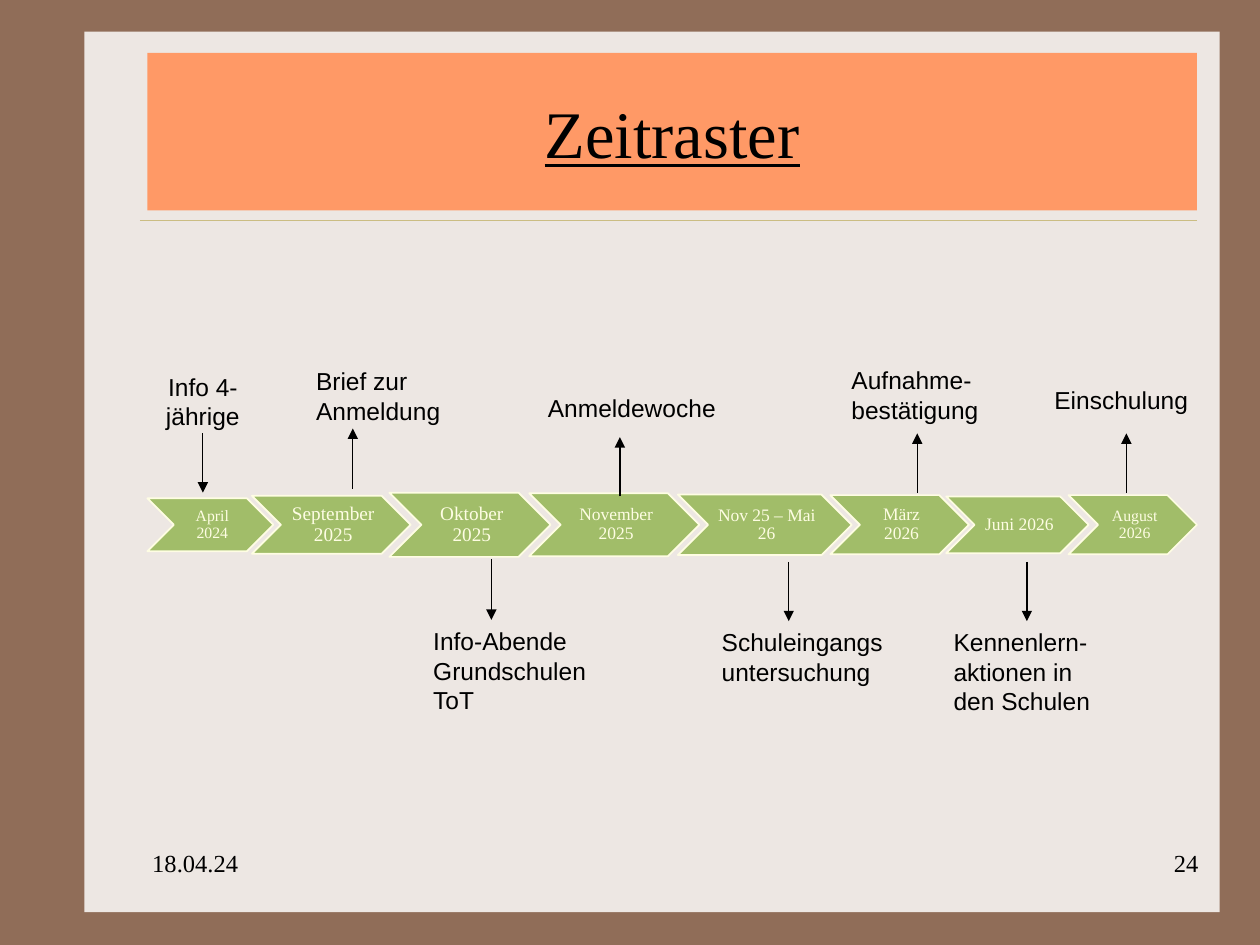
from lxml.etree import SubElement
from pptx import Presentation
from pptx.dml.color import RGBColor
from pptx.enum.shapes import MSO_CONNECTOR, MSO_SHAPE
from pptx.enum.text import MSO_ANCHOR, MSO_AUTO_SIZE, PP_ALIGN
from pptx.oxml.ns import qn
from pptx.util import Inches, Pt

BROWN = RGBColor(0x90, 0x6D, 0x58)
PAPER = RGBColor(0xED, 0xE7, 0xE3)
SAND = RGBColor(0xCB, 0xBD, 0x83)
GREEN = RGBColor(0xA1, 0xBD, 0x69)
CREAM = RGBColor(0xFE, 0xFD, 0xE3)
ORANGE = RGBColor(0xFF, 0x99, 0x66)
BLACK = RGBColor(0, 0, 0)
SERIF, SANS = "Times New Roman", "Arial"
AXIS = 4.165  # vertical centre of the chevron row

# left, width, height, text size, text
MONTHS = [
    (1.17, 1.00, 0.42, 9, "April 2024"),
    (2.00, 1.26, 0.46, 11, "September 2025"),
    (3.09, 1.28, 0.51, 11, "Oktober 2025"),
    (4.20, 1.35, 0.50, 10, "November 2025"),
    (5.38, 1.38, 0.48, 10, "Nov 25 – Mai 26"),
    (6.59, 1.10, 0.47, 10, "März 2026"),
    (7.51, 1.13, 0.45, 10, "Juni 2026"),
    (8.48, 1.02, 0.47, 9, "August 2026"),
]

# x, start y, end y
ARROWS = [
    (1.61, 3.44, 3.91),
    (2.80, 3.88, 3.40),
    (3.90, 4.44, 4.92),
    (4.92, 3.94, 3.47),
    (6.26, 4.46, 4.93),
    (7.28, 3.91, 3.44),
    (8.15, 4.46, 4.93),
    (8.94, 3.91, 3.44),
]

# left, top, width, height, paragraphs, alignment
EVENTS = [
    (1.07, 2.90, 1.08, 0.57, ["Info 4-jährige"], PP_ALIGN.CENTER),
    (2.41, 2.86, 1.29, 0.57, ["Brief zur Anmeldung"], PP_ALIGN.LEFT),
    (3.34, 4.92, 1.50, 0.81, ["Info-Abende Grundschulen", "ToT"], PP_ALIGN.LEFT),
    (4.25, 3.07, 1.65, 0.34, ["Anmeldewoche"], PP_ALIGN.LEFT),
    (5.63, 4.93, 1.50, 0.57, ["Schuleingangsuntersuchung"], PP_ALIGN.LEFT),
    (6.66, 2.85, 1.26, 0.57, ["Aufnahme-", "bestätigung"], PP_ALIGN.LEFT),
    (7.47, 4.93, 1.33, 0.81, ["Kennenlern-", "aktionen in den Schulen"], PP_ALIGN.LEFT),
    (8.27, 3.01, 1.34, 0.34, ["Einschulung"], PP_ALIGN.LEFT),
]


class TimelineSlide:
    def __init__(self, page):
        self.page = page
        page.background.fill.solid()
        page.background.fill.fore_color.rgb = BROWN

    def shape(self, kind, left, top, width, height, fill, outline=None):
        shape = self.page.shapes.add_shape(
            kind, Inches(left), Inches(top), Inches(width), Inches(height))
        shape.shadow.inherit = False
        shape.fill.solid()
        shape.fill.fore_color.rgb = fill
        if outline is None:
            shape.line.fill.background()
        else:
            shape.line.color.rgb = outline
            shape.line.width = Pt(1)

    def title(self, text, left, top, width, height):
        title = self.page.shapes.title
        title.element.getparent().append(title.element)  # bring to front
        title.left, title.top = Inches(left), Inches(top)
        title.width, title.height = Inches(width), Inches(height)
        title.fill.solid()
        title.fill.fore_color.rgb = ORANGE
        frame = title.text_frame
        frame.auto_size = MSO_AUTO_SIZE.NONE
        frame.vertical_anchor = MSO_ANCHOR.MIDDLE
        frame.text = text
        para = frame.paragraphs[0]
        para.alignment = PP_ALIGN.CENTER
        self.style(para, SERIF, 38, BLACK)
        para.font.underline = True

    def style(self, para, name, size, color):
        para.font.name = name
        para.font.size = Pt(size)
        para.font.color.rgb = color

    def text(self, left, top, width, height, lines, align=PP_ALIGN.LEFT,
             name=SANS, size=14, color=BLACK):
        box = self.page.shapes.add_textbox(
            Inches(left), Inches(top), Inches(width), Inches(height))
        frame = box.text_frame
        frame.word_wrap = True
        frame.text = "\n".join(lines)
        for para in frame.paragraphs:
            para.alignment = align
            self.style(para, name, size, color)
        return frame

    def month(self, left, width, height, size, text):
        """Draw a chevron with its label between notch and tip."""
        top = AXIS - height / 2
        self.shape(MSO_SHAPE.CHEVRON, left, top, width, height, GREEN, CREAM)
        frame = self.text(left + height / 2, top, width - height, height, [text],
                          PP_ALIGN.CENTER, SERIF, size, CREAM)
        frame.vertical_anchor = MSO_ANCHOR.MIDDLE
        frame.margin_left = Inches(0.04)
        frame.margin_right = frame.margin_top = frame.margin_bottom = Inches(0.01)
        frame.paragraphs[0].line_spacing = 0.9

    def line(self, x1, y1, x2, y2, color, weight, arrow=False):
        line = self.page.shapes.add_connector(
            MSO_CONNECTOR.STRAIGHT, Inches(x1), Inches(y1), Inches(x2), Inches(y2))
        line.line.color.rgb = color
        line.line.width = Pt(weight)
        if arrow:
            SubElement(line.line._get_or_add_ln(), qn("a:tailEnd"), type="triangle")
        SubElement(line.element.spPr, qn("a:effectLst"))


def main():
    deck = Presentation()
    deck.slide_width, deck.slide_height = Inches(10), Inches(7.5)
    slide = TimelineSlide(deck.slides.add_slide(deck.slide_layouts[5]))

    slide.shape(MSO_SHAPE.RECTANGLE, 0.67, 0.25, 9.01, 6.99, PAPER)
    slide.line(1.11, 1.75, 9.5, 1.75, SAND, 0.25)
    for month in MONTHS:
        slide.month(*month)
    slide.text(1.11, 6.68, 2.08, 0.5, ["18.04.24"], name=SERIF)
    slide.text(7.53, 6.68, 2.08, 0.5, ["24"], PP_ALIGN.RIGHT, SERIF)
    slide.title("Zeitraster", 1.17, 0.42, 8.33, 1.25)
    for x, start, end in ARROWS:
        slide.line(x, start, x, end, BLACK, 0.75, arrow=True)
    for event in EVENTS:
        slide.text(*event).auto_size = MSO_AUTO_SIZE.SHAPE_TO_FIT_TEXT

    deck.save("out.pptx")


if __name__ == "__main__":
    main()
